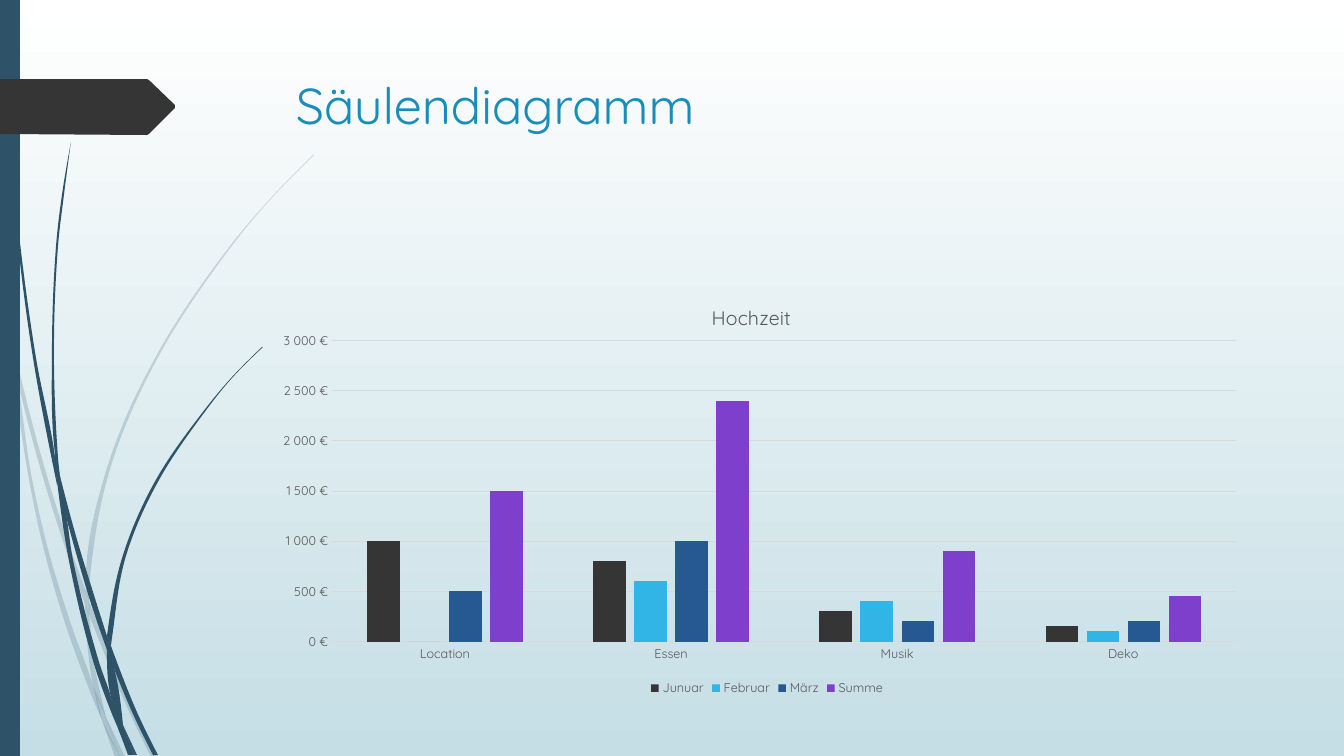
import itertools

import lxml.etree
import pptx
import pptx.chart.data
import pptx.dml.color
import pptx.enum.chart
import pptx.enum.shapes
import pptx.oxml.ns
import pptx.util

PX = 914400 / 100.8
FONT = "Quicksand"
TEAL, CHARCOAL, GREY, GRID = "2E5369", "353535", "595959", "D9D9D9"
BACKGROUND = ("FFFFFF", "C5DEE5")

TITLE = "Säulendiagramm"
TITLE_BOX = (286, 69, 983, 141)
CHART_TITLE = "Hochzeit"
CHART_BOX = (276, 283, 982, 417)
CATEGORIES = ("Location", "Essen", "Musik", "Deko")
SERIES = (
    ("Junuar", (1000, 800, 300, 150), "353535"),
    ("Februar", (0, 600, 400, 100), "31B4E6"),
    ("März", (500, 1000, 200, 200), "265991"),
    ("Summe", (1500, 2400, 900, 450), "7E40CC"),
)
EURO_FORMAT = r"#\ ##0\ [$€-1];[Red]\-#\ ##0\ [$€-1]"
SIDE_BAR = (0, 0, 20, 756)
ARROW_TAB = ((0, 79), (147, 79), (149, 80), (175, 105), (175, 108), (149, 134),
             (147, 135), (0, 134))

# Parts of the grass blades: left edge and right edge, each from top to bottom
PALE_BLADES = (
    (((0, 301), (10, 347)), ((0, 284), (9, 325), (11, 353))),
    (((17, 379), (36, 453), (58, 526), (85, 604)),
     ((14, 348), (36, 437), (62, 524), (86, 591))),
    (((89, 615), (124, 700), (151, 757)), ((89, 601), (128, 698), (156, 757))),
    (((106, 717), (120, 757)), ((106, 717), (125, 757))),
    (((11, 353), (28, 474), (44, 550), (66, 626), (93, 699), (102, 720)),
     ((11, 353), (17, 379), (31, 473), (48, 549), (71, 624), (94, 688), (102, 720))),
    (((85, 604), (88, 651), (94, 688), (106, 717)),
     ((85, 604), (89, 615), (92, 651), (106, 717))),
    (((314, 154), (270, 199), (230, 246), (159, 351), (108, 465), (86, 589), (89, 601)),
     ((314, 155), (270, 200), (231, 247), (161, 352), (111, 466), (89, 589), (89, 601))),
    (((102, 720), (115, 757)), ((102, 720), (120, 757))),
    (((86, 591), (85, 604)), ((86, 591), (89, 601), (89, 615))),
    (((94, 688), (102, 720), (120, 757)), ((94, 688), (106, 717), (120, 757))),
)
DARK_BLADES = (
    (((3, 0), (4, 48), (7, 111), (17, 235), (33, 358), (57, 485)),
     ((4, 0), (5, 48), (8, 110), (19, 234), (36, 358), (55, 457), (57, 485))),
    (((64, 509), (89, 597), (107, 650)), ((60, 476), (76, 536), (94, 595), (107, 636))),
    (((111, 661), (133, 714), (153, 755)), ((111, 646), (137, 712), (158, 755))),
    (((57, 481), (69, 561), (94, 664), (112, 714), (118, 728)),
     ((57, 481), (65, 509), (73, 560), (99, 662), (111, 697), (118, 728))),
    (((71, 142), (62, 195), (56, 247), (52, 352), (55, 453), (60, 476)),
     ((71, 142), (64, 195), (58, 247), (54, 352), (58, 457), (60, 476))),
    (((123, 725), (134, 755)), ((123, 725), (137, 755))),
    (((55, 453), (57, 481), (65, 509)), ((55, 453), (60, 476), (65, 509))),
    (((262, 347), (233, 376), (206, 408), (157, 478), (123, 555), (107, 636)),
     ((263, 347), (233, 377), (207, 409), (159, 480), (126, 556), (112, 638), (111, 646))),
    (((118, 728), (128, 755)), ((118, 728), (132, 755))),
    (((107, 650), (111, 697), (123, 725)), ((107, 650), (112, 661), (123, 725))),
    (((107, 636), (107, 650)), ((107, 636), (111, 646), (112, 661))),
    (((111, 697), (118, 728), (131, 755)), ((111, 697), (123, 725), (134, 755))),
)
qn = pptx.oxml.ns.qn


def color(value):
    return pptx.dml.color.RGBColor.from_string(value)


def emu(lengths):
    return [round(length * PX) for length in lengths]


def paint(shape, value, opacity=100):
    shape.shadow.inherit = False
    shape.line.fill.background()
    shape.fill.solid()
    shape.fill.fore_color.rgb = color(value)
    if opacity < 100:
        rgb = shape.fill._xPr.find(".//" + qn("a:srgbClr"))
        lxml.etree.SubElement(rgb, qn("a:alpha")).set("val", str(opacity * 1000))


def style(font, size, value):
    font.name, font.size, font.bold = FONT, pptx.util.Pt(size), False
    font.color.rgb = color(value)


def smooth(points):
    """Put two Bezier control points between each pair of points, with x a function of y."""
    pairs = list(itertools.pairwise(points))
    chords = [(x1 - x0) / (y1 - y0) for (x0, y0), (x1, y1) in pairs]
    inner = [(a + b) / 2 for a, b in itertools.pairwise(chords)] or chords
    slopes = [(3 * chords[0] - inner[0]) / 2, *inner, (3 * chords[-1] - inner[-1]) / 2]
    if len(points) == 2:
        slopes = chords * 2
    curve = [points[0]]
    for ((x0, y0), (x1, y1)), (m0, m1) in zip(pairs, itertools.pairwise(slopes)):
        third = (y1 - y0) / 3
        curve += [(x0 + m0 * third, y0 + third), (x1 - m1 * third, y1 - third), (x1, y1)]
    return curve


def add_outline(page, points):
    corners = [emu(point) for point in points]
    builder = page.shapes.build_freeform(*corners[0])
    builder.add_line_segments(corners[1:], close=False)
    return builder.convert_to_shape()


def add_blade(page, left, right, opacity):
    down, up = smooth(left), smooth(right)[::-1]
    shape = add_outline(page, down + [down[-1], up[0]] + up)
    outline = shape._element.find(".//" + qn("a:path"))
    lines = outline.findall(qn("a:lnTo"))
    for first in range(0, len(lines), 3):
        curve = lxml.etree.SubElement(outline, qn("a:cubicBezTo"))
        for line in lines[first:first + 3]:
            curve.append(line[0])
            outline.remove(line)
    lxml.etree.SubElement(outline, qn("a:close"))
    paint(shape, TEAL, opacity)


def place(element, index, **settings):
    """Give a chart part a manual layout, in fractions of the chart."""
    for old in element.findall(qn("c:layout")):
        element.remove(old)
    layout = lxml.etree.Element(qn("c:layout"))
    manual = lxml.etree.SubElement(layout, qn("c:manualLayout"))
    for name, value in settings.items():
        lxml.etree.SubElement(manual, qn("c:" + name)).set("val", str(value))
    element.insert(index, layout)


def add_budget_chart(page):
    data = pptx.chart.data.CategoryChartData()
    data.categories = CATEGORIES
    for name, values, _ in SERIES:
        data.add_series(name, values)
    kinds = pptx.enum.chart
    chart = page.shapes.add_chart(
        kinds.XL_CHART_TYPE.COLUMN_CLUSTERED, *emu(CHART_BOX), data).chart
    style(chart.font, 9, GREY)

    chart.has_title = True
    para = chart.chart_title.text_frame.paragraphs[0]
    para.text = CHART_TITLE
    style(para.font, 14, GREY)
    place(chart.chart_title._element, 1, xMode="edge", yMode="edge", x=0.44, y=0.04)
    place(chart._chartSpace.chart.plotArea, 0, layoutTarget="inner",
          xMode="edge", yMode="edge", x=0.057, y=0.138, w=0.921, h=0.722)

    chart.has_legend = True
    chart.legend.position = kinds.XL_LEGEND_POSITION.BOTTOM
    chart.legend.include_in_layout = False
    style(chart.legend.font, 9, GREY)

    plot = chart.plots[0]
    plot.gap_width, plot.overlap, plot.vary_by_categories = 219, -27, False
    for series, (_, _, fill) in zip(plot.series, SERIES):
        series.format.fill.solid()
        series.format.fill.fore_color.rgb = color(fill)

    amounts = chart.value_axis
    amounts.minimum_scale, amounts.maximum_scale, amounts.major_unit = 0, 3000, 500
    amounts.tick_labels.number_format = EURO_FORMAT
    amounts.tick_labels.number_format_is_linked = False
    amounts.format.line.fill.background()
    for axis in (amounts, chart.category_axis):
        axis.major_tick_mark = kinds.XL_TICK_MARK.NONE
        style(axis.tick_labels.font, 9, GREY)
    for line in (amounts.major_gridlines.format.line, chart.category_axis.format.line):
        line.width = pptx.util.Pt(0.75)
        line.color.rgb = color(GRID)


deck = pptx.Presentation()
deck.slide_width, deck.slide_height = emu((1344, 756))
page = deck.slides.add_slide(deck.slide_layouts[6])
backdrop = page.background.fill
backdrop.gradient()
backdrop.gradient_angle = 270
for stop, value, position in zip(backdrop.gradient_stops, BACKGROUND, (0, 1)):
    stop.color.rgb, stop.position = color(value), position
for blades, opacity in ((PALE_BLADES, 20), (DARK_BLADES, 100)):
    for left, right in blades:
        add_blade(page, left, right, opacity)
paint(page.shapes.add_shape(pptx.enum.shapes.MSO_SHAPE.RECTANGLE, *emu(SIDE_BAR)), TEAL)
paint(add_outline(page, ARROW_TAB), CHARCOAL)
box = page.shapes.add_textbox(*emu(TITLE_BOX))
box.text_frame.word_wrap = True
para = box.text_frame.paragraphs[0]
para.text = TITLE
style(para.font, 36, "178DBB")
add_budget_chart(page)
deck.save("out.pptx")
